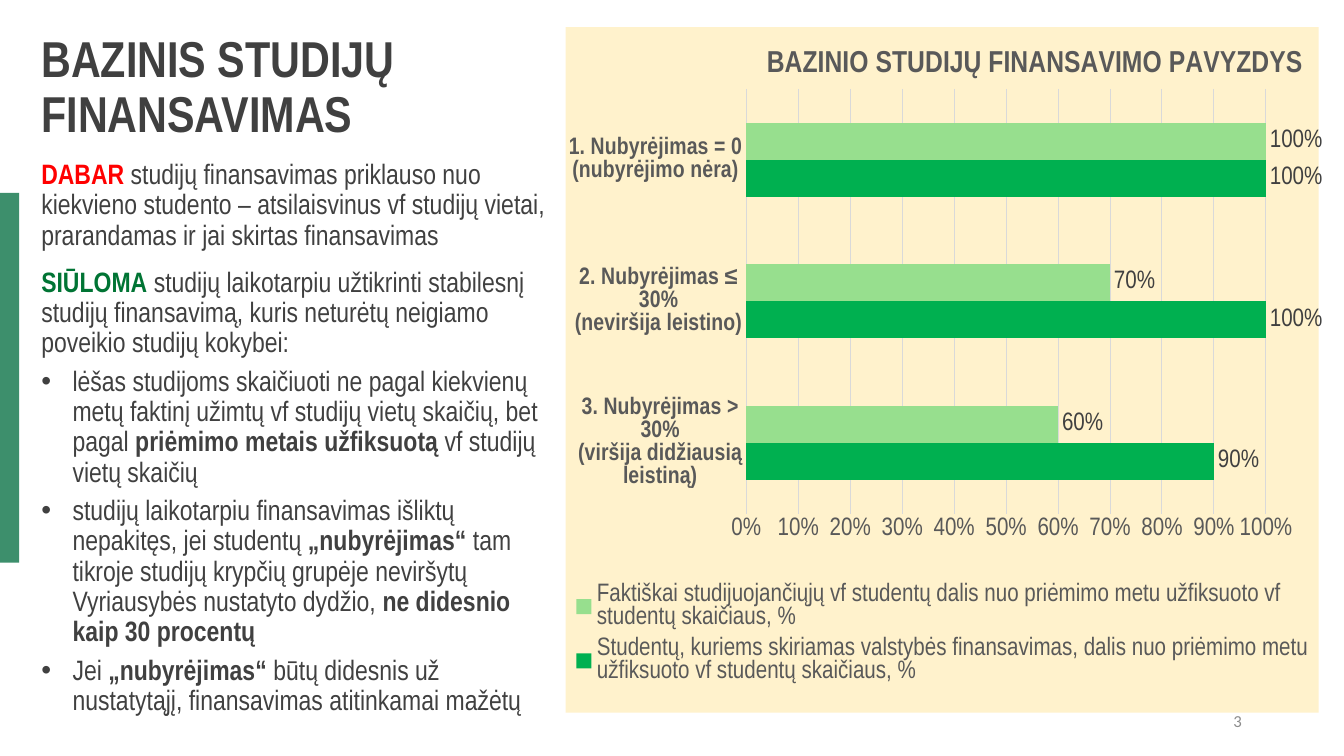
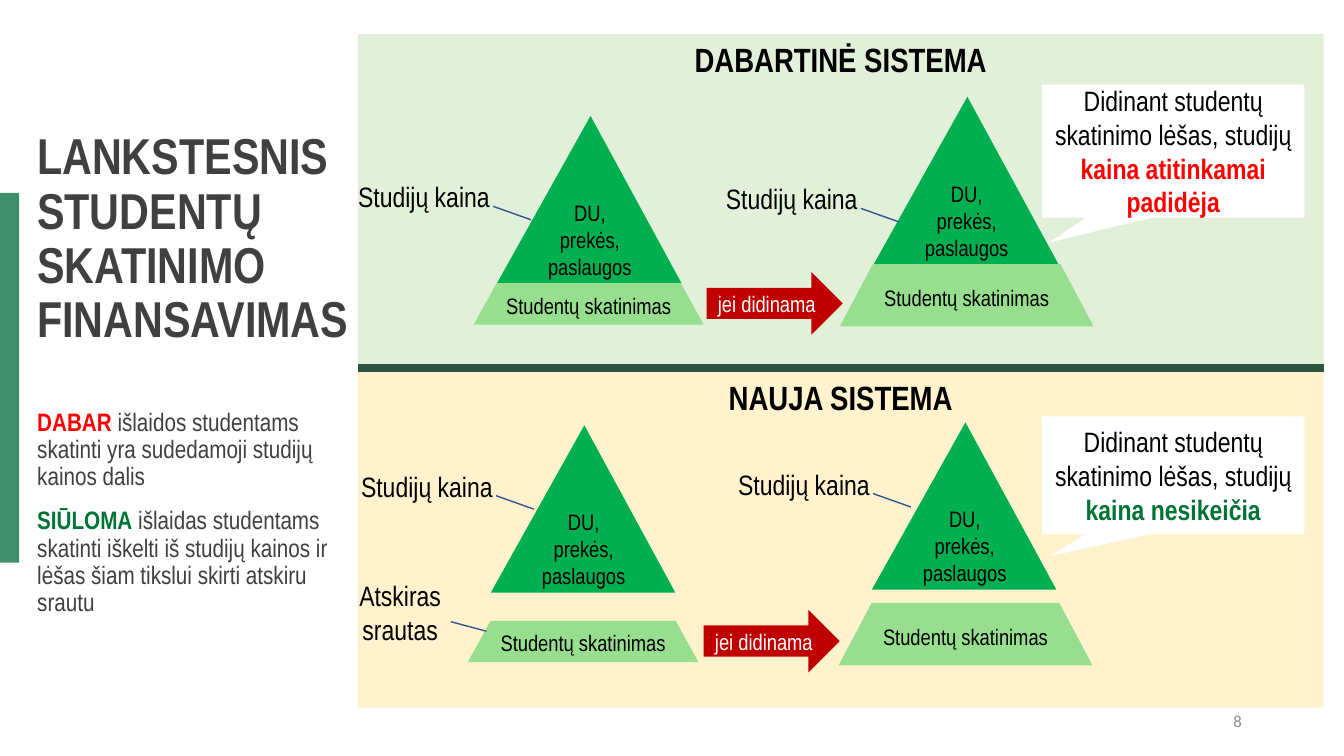
from pptx import Presentation
from pptx.chart.data import CategoryChartData
from pptx.dml.color import RGBColor
from pptx.enum.chart import XL_CHART_TYPE as CT, XL_LABEL_POSITION as LABEL
from pptx.enum.chart import XL_LEGEND_POSITION as LEGEND, XL_TICK_MARK as TICK
from pptx.enum.shapes import MSO_CONNECTOR as CONN, MSO_SHAPE as SHAPE
from pptx.enum.text import MSO_ANCHOR as ANCHOR, MSO_AUTO_SIZE as AUTO, PP_ALIGN as ALIGN
from pptx.oxml import parse_xml
from pptx.oxml.ns import nsdecls, qn
from pptx.util import Pt

# Shared look
FONT = "Arial Narrow"
DARK, GREY, GRID, BLACK, WHITE = "404040", "595959", "D9D9D9", "000000", "FFFFFF"
BAND, DIVIDER, CREAM, MINT = "3D8F6C", "2A563F", "FFF2CC", "E2F0D9"
GREEN, LIGHT_GREEN, RED, LEADER = "00B050", "97DF8E", "C00000", "325491"
STYLES = {
    "plain": {},
    "bold": {"bold": True},
    "now": {"bold": True, "color": "FF0000"},
    "new": {"bold": True, "color": "007434"},
}

# Content: paragraphs are (bulleted, space after, runs)
FUNDING = {
    "title": "BAZINIS STUDIJŲ FINANSAVIMAS", "number": "3", "size": 20,
    "title_box": (22.3, 20.9, 381.6, 86), "body_box": (22.3, 111, 381.6, 399),
    "body": [
        (False, 12, [("DABAR", "now"),
                     (" studijų finansavimas priklauso nuo kiekvieno studento – atsilaisvinus "
                      "vf studijų vietai, prarandamas ir jai skirtas finansavimas", "plain")]),
        (False, 6, [("SIŪLOMA", "new"),
                    (" studijų laikotarpiu užtikrinti stabilesnį studijų finansavimą, kuris "
                     "neturėtų neigiamo poveikio studijų kokybei:", "plain")]),
        (True, 6, [("lėšas studijoms skaičiuoti ne pagal kiekvienų metų faktinį užimtų "
                    "vf studijų vietų skaičių, bet pagal ", "plain"),
                   ("priėmimo metais užfiksuotą ", "bold"),
                   ("vf studijų vietų skaičių", "plain")]),
        (True, 6, [("studijų laikotarpiu finansavimas išliktų nepakitęs, jei studentų ", "plain"),
                   ("„nubyrėjimas“ ", "bold"),
                   ("tam tikroje studijų krypčių grupėje neviršytų Vyriausybės "
                    "nustatyto dydžio, ", "plain"),
                   ("ne didesnio kaip 30 procentų", "bold")]),
        (True, 6, [("Jei ", "plain"), ("„nubyrėjimas“ ", "bold"),
                   ("būtų didesnis už nustatytąjį, finansavimas atitinkamai mažėtų", "plain")]),
    ],
}
INCENTIVES = {
    "title": "LANKSTESNIS STUDENTŲ SKATINIMO FINANSAVIMAS", "number": "8", "size": 18,
    "title_box": (19.4, 90, 242.6, 164), "body_box": (19.4, 289, 242.6, 240),
    "body": [
        (False, 12, [("DABAR", "now"),
                     (" išlaidos studentams skatinti yra sudedamoji studijų kainos dalis",
                      "plain")]),
        (False, 6, [("SIŪLOMA", "new"),
                    (" išlaidas studentams skatinti iškelti iš studijų kainos ir lėšas šiam "
                     "tikslui skirti atskiru srautu", "plain")]),
    ],
}
CHART_TITLE = "BAZINIO STUDIJŲ FINANSAVIMO PAVYZDYS"
CATEGORIES = ["3. Nubyrėjimas > 30%\n(viršija didžiausią leistiną)",
              "2. Nubyrėjimas ≤ 30%\n(neviršija leistino)",
              "1. Nubyrėjimas = 0\n(nubyrėjimo nėra)"]
SERIES = [
    ("Studentų, kuriems skiriamas valstybės finansavimas, dalis nuo priėmimo metu "
     "užfiksuoto vf studentų skaičiaus, %", GREEN, (0.9, 1, 1)),
    ("Faktiškai studijuojančiųjų vf studentų dalis nuo priėmimo metu užfiksuoto "
     "vf studentų skaičiaus, %", LIGHT_GREEN, (0.6, 0.7, 1)),
]
PRICE, COSTS, SUPPORT = "Studijų kaina", "DU, prekės, paslaugos", "Studentų skatinimas"
REMARK = "Didinant studentų skatinimo lėšas, studijų "
PANEL_X, PANEL_W, PANEL_H = 255.6, 689.8, 239.8
PANELS = [
    {"title": "DABARTINĖ SISTEMA", "fill": MINT, "top": 24.5,
     "costs": [(355, 82.8), (624.2, 69.1)],
     "support": [(338.4, 202.3, 164.2, 29.5, 0.552), (599.8, 188.6, 181.4, 44.6, 0.532)],
     "arrow": (504.7, 194.4),
     "labels": [(PRICE, 242, 119.5, 121.7), (PRICE, 504.7, 121, 121.7)],
     "remark": ("kaina atitinkamai padidėja", "now", 60.5, 95)},
    {"title": "NAUJA SISTEMA", "fill": CREAM, "top": 265.7,
     "costs": [(350.6, 303.8), (622.8, 301.7)],
     "support": [(334.1, 443.5, 164.9, 29.5, 0.552), (599, 430.6, 181.4, 44.6, 0.532)],
     "arrow": (502.6, 435.6),
     "labels": [(PRICE, 244.1, 326.2, 121.7), (PRICE, 513.4, 324.7, 121.7),
                ("Atskiras srautas", 241.2, 416.2, 89.3)],
     "remark": ("kaina nesikeičia", "new", 297.4, 84.2)},
]


def rgb(value):
    return RGBColor.from_string(value)


def set_font(font, size, color=DARK, bold=False, name=FONT):
    for key, value in {"size": Pt(size), "bold": bold, "name": name}.items():
        setattr(font, key, value)
    font.color.rgb = rgb(color)


def write(p, runs, size, color=DARK, align=ALIGN.LEFT, **fmt):
    p.alignment = align
    for text, style in runs:
        r = p.add_run()
        r.text = text
        set_font(r.font, size, **{"color": color, **fmt, **STYLES[style]})


def place(sp, box):
    for key, value in zip(("left", "top", "width", "height"), box):
        setattr(sp, key, Pt(value))


def add_part(s, kind, box, fill=None, line=None, adj=(), runs=(), size=16,
             color=BLACK, anchor=ANCHOR.MIDDLE, **fmt):
    sp = s.shapes.add_shape(kind, *map(Pt, box))
    sp.shadow.inherit = False
    if fill:
        sp.fill.solid()
        sp.fill.fore_color.rgb = rgb(fill)
    else:
        sp.fill.background()
    if line:
        sp.line.color.rgb = rgb(line)
        sp.line.width = Pt(1)
    else:
        sp.line.fill.background()
    for i, value in enumerate(adj):
        sp.adjustments[i] = value
    tf = sp.text_frame
    tf.word_wrap = True
    tf.vertical_anchor = anchor
    write(tf.paragraphs[0], runs, size, color, ALIGN.CENTER, **fmt)
    return sp


def fill_placeholder(sp, box, paragraphs, size, bold=False):
    place(sp, box)
    tf = sp.text_frame
    for key, value in {"word_wrap": True, "auto_size": AUTO.NONE,
                       "vertical_anchor": ANCHOR.TOP}.items():
        setattr(tf, key, value)
    for i, (bulleted, after, runs) in enumerate(paragraphs):
        p = tf.add_paragraph() if i else tf.paragraphs[0]
        write(p, runs, size, bold=bold)
        for key, value in {"line_spacing": 0.9, "space_before": Pt(0),
                           "space_after": Pt(after)}.items():
            setattr(p, key, value)
        indent = Pt(22.3) if bulleted else 0
        pPr = p._p.get_or_add_pPr()
        pPr.set("marL", str(indent))
        pPr.set("indent", str(-indent))
        bullet = '<a:buChar {} char="•"/>' if bulleted else "<a:buNone {}/>"
        pPr.append(parse_xml(bullet.format(nsdecls("a"))))


def add_base(prs, content):
    """Slide with title, body, side band and page number."""
    s = prs.slides.add_slide(prs.slide_layouts[1])
    title = [(False, 12, [(content["title"], "plain")])]
    fill_placeholder(s.shapes.title, content["title_box"], title, 36, bold=True)
    fill_placeholder(s.placeholders[1], content["body_box"], content["body"], content["size"])
    add_part(s, SHAPE.RECTANGLE, (0, 137.8, 13.7, 264.2), BAND)
    tf = s.shapes.add_textbox(*map(Pt, (678.2, 500.4, 216, 28.8))).text_frame
    tf.word_wrap = True
    tf.vertical_anchor = ANCHOR.MIDDLE
    write(tf.paragraphs[0], [(content["number"], "plain")], 12, "8C8C8C",
          ALIGN.RIGHT, name="Calibri")
    return s


def set_layout(parent, after=None, inner=False, **pos):
    """Manual layout of a chart part, as fractions of the chart."""
    for old in parent.findall(qn("c:layout")):
        parent.remove(old)
    target = '<c:layoutTarget val="inner"/>' if inner else ""
    modes = "".join(f'<c:{k}Mode val="edge"/>' for k in "xy")
    values = "".join(f'<c:{k} val="{v}"/>' for k, v in pos.items())
    layout = parse_xml(f'<c:layout {nsdecls("c")}><c:manualLayout>{target}{modes}{values}'
                       "</c:manualLayout></c:layout>")
    if after:
        parent.find(qn(after)).addnext(layout)
    else:
        parent.insert(0, layout)


def add_bar_chart(s):
    data = CategoryChartData(number_format="0%")
    data.categories = CATEGORIES
    for name, _, values in SERIES:
        data.add_series(name, values)
    box = map(Pt, (404, 19.4, 540.7, 489.6))
    chart = s.shapes.add_chart(CT.BAR_CLUSTERED, *box, data).chart
    set_font(chart.font, 18, BLACK)
    chart.has_title = True
    write(chart.chart_title.text_frame.paragraphs[0], [(CHART_TITLE, "bold")], 21.6, GREY)

    # Bars and labels
    plot = chart.plots[0]
    for key, value in {"gap_width": 182, "overlap": 0, "vary_by_categories": False}.items():
        setattr(plot, key, value)
    for series, (_, color, _) in zip(plot.series, SERIES):
        series.format.fill.solid()
        series.format.fill.fore_color.rgb = rgb(color)
        labels = series.data_labels
        for key, value in {"show_value": True, "number_format": "0%",
                           "number_format_is_linked": False,
                           "position": LABEL.OUTSIDE_END}.items():
            setattr(labels, key, value)
        set_font(labels.font, 18)

    # Axes
    cat, val = chart.category_axis, chart.value_axis
    for axis, size, bold in ((cat, 17, True), (val, 18, False)):
        axis.major_tick_mark = axis.minor_tick_mark = TICK.NONE
        set_font(axis.tick_labels.font, size, GREY, bold)
    for key, value in {"minimum_scale": 0, "maximum_scale": 1, "major_unit": 0.1,
                       "has_major_gridlines": True}.items():
        setattr(val, key, value)
    val.tick_labels.number_format = "0%"
    val.tick_labels.number_format_is_linked = False
    val.format.line.fill.background()
    for line in (cat.format.line, val.major_gridlines.format.line):
        line.color.rgb = rgb(GRID)
        line.width = Pt(0.75)

    # Legend, positions and background
    chart.has_legend = True
    chart.legend.position = LEGEND.BOTTOM
    chart.legend.include_in_layout = False
    set_font(chart.legend.font, 18, GREY)
    space = chart.element
    root = space.find(qn("c:chart"))
    set_layout(root.find(qn("c:title")), "c:tx", x=0.26, y=0.02)
    set_layout(root.find(qn("c:plotArea")), inner=True, x=0.24, y=0.09, w=0.69, h=0.62)
    set_layout(root.find(qn("c:legend")), "c:legendPos", x=0.01, y=0.8, w=0.98, h=0.17)
    root.addnext(parse_xml(
        f'<c:spPr {nsdecls("c", "a")}><a:solidFill><a:srgbClr val="{CREAM}"/></a:solidFill>'
        "<a:ln><a:noFill/></a:ln></c:spPr>"))


def add_panel(s, panel):
    add_part(s, SHAPE.RECTANGLE, (PANEL_X, panel["top"], PANEL_W, PANEL_H), panel["fill"],
             runs=[(panel["title"], "bold")], size=24, anchor=ANCHOR.TOP)
    for x, y in panel["costs"]:
        sp = add_part(s, SHAPE.ISOSCELES_TRIANGLE, (x, y, 131.8, 119.5), GREEN,
                      adj=[0.507], runs=[(COSTS, "plain")])
        for side, inset in {"left": 2.9, "top": 0, "right": 2.9, "bottom": 2.9}.items():
            setattr(sp.text_frame, f"margin_{side}", Pt(inset))
    for *box, slant in panel["support"]:
        add_part(s, SHAPE.TRAPEZOID, box, LIGHT_GREEN, adj=[slant], runs=[(SUPPORT, "plain")])
    add_part(s, SHAPE.RIGHT_ARROW, (*panel["arrow"], 97.2, 44.6), RED,
             runs=[("jei didinama", "plain")], color=WHITE)
    for text, x, y, w in panel["labels"]:
        end = (0.896, 1.128) if text == PRICE else (0.829, 1.19)
        add_part(s, SHAPE.LINE_CALLOUT_1_NO_BORDER, (x, y, w, 41.8), line=LEADER,
                 adj=(0.667, 0.906, *end), runs=[(text, "plain")], size=20)
    text, style, y, h = panel["remark"]
    add_part(s, SHAPE.RECTANGULAR_CALLOUT, (744.5, y, 187.2, h), WHITE, adj=(-0.472, 0.686),
             runs=[(REMARK, "plain"), (text, style)], size=20)


def add_divider(s):
    y = 262.8
    line = s.shapes.add_connector(CONN.STRAIGHT, Pt(PANEL_X), Pt(y), Pt(PANEL_X + PANEL_W), Pt(y))
    line.line.color.rgb = rgb(DIVIDER)
    line.line.width = Pt(6)
    line._element.spPr.append(parse_xml(f'<a:effectLst {nsdecls("a")}/>'))


def main():
    prs = Presentation()
    prs.slide_width, prs.slide_height = Pt(960), Pt(540)
    add_bar_chart(add_base(prs, FUNDING))
    s = add_base(prs, INCENTIVES)
    for panel in PANELS:
        add_panel(s, panel)
    add_divider(s)
    prs.save("out.pptx")


if __name__ == "__main__":
    main()
